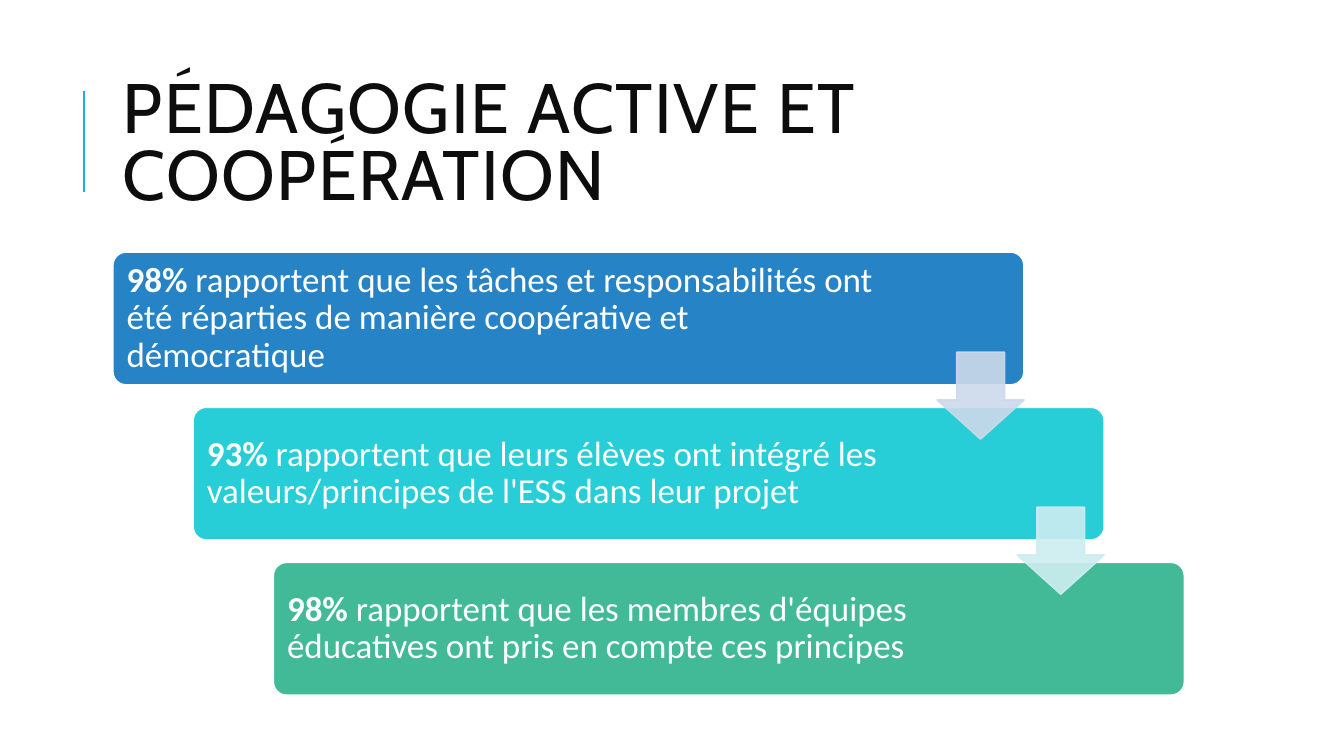
from lxml import etree
from pptx import Presentation
from pptx.dml.color import RGBColor
from pptx.enum.shapes import MSO_CONNECTOR, MSO_SHAPE
from pptx.enum.text import MSO_ANCHOR, MSO_AUTO_SIZE, PP_ALIGN
from pptx.oxml.ns import qn
from pptx.util import Pt

ROUNDED, DOWN_ARROW = MSO_SHAPE.ROUNDED_RECTANGLE, MSO_SHAPE.DOWN_ARROW
STRAIGHT, MIDDLE, LEFT = MSO_CONNECTOR.STRAIGHT, MSO_ANCHOR.MIDDLE, PP_ALIGN.LEFT
NO_FIT = MSO_AUTO_SIZE.NONE
WHITE = RGBColor(0xFF, 0xFF, 0xFF)
INK = RGBColor(0x0D, 0x0D, 0x0D)
ACCENT = RGBColor(0x1C, 0xAD, 0xE4)
BLUE = RGBColor(0x26, 0x83, 0xC6)
CYAN = RGBColor(0x27, 0xCE, 0xD7)
GREEN = RGBColor(0x42, 0xBA, 0x97)
PALE_BLUE = RGBColor(0xCD, 0xD9, 0xEA)
PALE_CYAN = RGBColor(0xCD, 0xED, 0xF0)

TITLE = "PÉDAGOGIE ACTIVE ET COOPÉRATION"
STEPS = [
    ("98% ", "rapportent que les tâches et responsabilités ont été réparties "
     "de manière coopérative et démocratique", BLUE, 104.4),
    ("93% ", "rapportent que leurs élèves ont intégré les valeurs/principes "
     "de l'ESS dans leur projet", CYAN, 126.7),
    ("98% ", "rapportent que les membres d'équipes éducatives ont pris en "
     "compte ces principes", GREEN, 126.7),
]
ARROWS = [PALE_BLUE, PALE_CYAN]

STEP_X, STEP_Y = 57.3, 110.8
CARD_X, CARD_Y, CARD_W, CARD_H = 80.6, 180, 650.9, 95
ARROW_X, ARROW_Y, ARROW_SIZE = 669.4, 251.6, 62
INSET = 7.2


def add_shape(slide, kind, box, fill, line, adjustments):
    sp = slide.shapes.add_shape(kind, *map(Pt, box))
    sp.shadow.inherit = False
    sp.fill.solid()
    sp.fill.fore_color.rgb = fill
    sp.line.color.rgb = line
    sp.line.width = Pt(1.25)
    for i, value in enumerate(adjustments):
        sp.adjustments[i] = value
    return sp


def add_title(slide):
    sp = slide.shapes.title
    sp.left, sp.top, sp.width, sp.height = map(Pt, (80.6, 46.1, 765.4, 118.1))
    tf = sp.text_frame
    tf.text = TITLE
    tf.auto_size = NO_FIT
    tf.vertical_anchor = MIDDLE
    p = tf.paragraphs[0]
    p.alignment = LEFT
    p.line_spacing = 0.8
    p.font.name, p.font.size = "Cabin", Pt(50)
    p.font.color.rgb = INK
    p.runs[0].font._element.set("spc", "100")


def add_rule(slide):
    line = slide.shapes.add_connector(STRAIGHT, Pt(60), Pt(136.8), Pt(60), Pt(64.8))
    line.line.color.rgb = ACCENT
    line.line.width = Pt(1.5)
    etree.SubElement(line._element.spPr, qn("a:effectLst"))


def add_card(slide, i, figure, text, color, right_inset):
    box = (CARD_X + i * STEP_X, CARD_Y + i * STEP_Y, CARD_W, CARD_H)
    sp = add_shape(slide, ROUNDED, box, color, WHITE, [0.1])
    tf = sp.text_frame
    tf.word_wrap = True
    tf.vertical_anchor = MIDDLE
    tf.margin_left = tf.margin_top = tf.margin_bottom = Pt(INSET)
    tf.margin_right = Pt(right_inset)
    p = tf.paragraphs[0]
    p.alignment = LEFT
    p.line_spacing = 0.9
    p.font.name, p.font.size = "Calibri", Pt(25)
    p.font.color.rgb = WHITE
    for words, bold in ((figure, True), (text, False)):
        r = p.add_run()
        r.text = words
        r.font.bold = bold


def add_arrow(slide, i, color):
    box = (ARROW_X + i * STEP_X, ARROW_Y + i * STEP_Y, ARROW_SIZE, ARROW_SIZE)
    sp = add_shape(slide, DOWN_ARROW, box, color, color, [0.55, 0.45])
    for clr in sp._element.spPr.iter(qn("a:srgbClr")):
        etree.SubElement(clr, qn("a:alpha"), val="90000")


def main():
    prs = Presentation()
    prs.slide_width, prs.slide_height = Pt(960), Pt(540)
    slide = prs.slides.add_slide(prs.slide_layouts[5])
    add_rule(slide)
    add_title(slide)
    for i, step in enumerate(STEPS):
        add_card(slide, i, *step)
    for i, color in enumerate(ARROWS):
        add_arrow(slide, i, color)
    prs.save("out.pptx")


if __name__ == "__main__":
    main()
